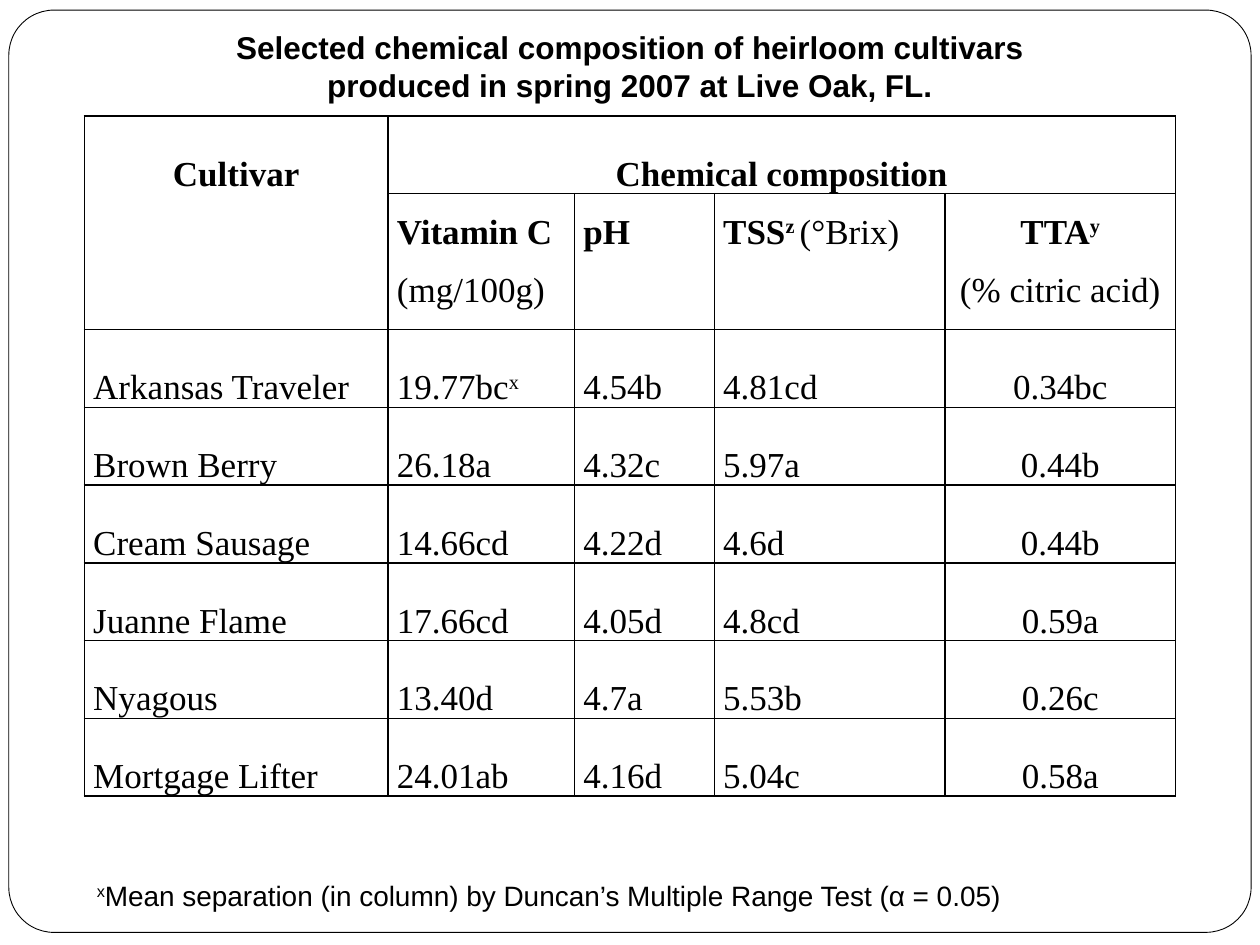
"""Build a slide tabulating the chemical composition of heirloom cultivars."""
from lxml import etree
from pptx import Presentation
from pptx.dml.color import RGBColor
from pptx.enum.shapes import MSO_SHAPE
from pptx.enum.text import MSO_ANCHOR, PP_ALIGN
from pptx.oxml.ns import qn
from pptx.util import Inches, Pt

BLACK = RGBColor(0, 0, 0)
WHITE = RGBColor(255, 255, 255)
ROUNDED = MSO_SHAPE.ROUNDED_RECTANGLE
LEFT, CENTER = PP_ALIGN.LEFT, PP_ALIGN.CENTER
TOP = MSO_ANCHOR.TOP
SANS, SERIF = "Arial", "Times New Roman"
PLAIN, BOLD, SUPER, BOLD_SUPER = (0, 0), (1, 0), (0, 1), (1, 1)

TITLE = [
    [("Selected chemical composition of heirloom cultivars", BOLD)],
    [("produced in spring 2007 at Live Oak, FL.", BOLD)],
]
MEASURES = [
    [[("Vitamin C", BOLD), (" (mg/100g)", PLAIN)]],
    [[("pH", BOLD)]],
    [[("TSS", BOLD), ("z ", BOLD_SUPER), ("(°Brix)", PLAIN)]],
    [[("TTA", BOLD), ("y", BOLD_SUPER)], [("(% citric acid)", PLAIN)]],
]
CULTIVARS = [
    ("Arkansas Traveler", "19.77bc", "4.54b", "4.81cd", "0.34bc"),
    ("Brown Berry", "26.18a", "4.32c", "5.97a", "0.44b"),
    ("Cream Sausage", "14.66cd", "4.22d", "4.6d", "0.44b"),
    ("Juanne Flame", "17.66cd", "4.05d", "4.8cd", "0.59a"),
    ("Nyagous", "13.40d", "4.7a", "5.53b", "0.26c"),
    ("Mortgage Lifter", "24.01ab", "4.16d", "5.04c", "0.58a"),
]
FOOTNOTE = [[
    ("x", SUPER),
    ("Mean separation (in column) by Duncan’s Multiple Range Test (α = 0.05)", PLAIN),
]]
COLUMN_WIDTHS = (2.41, 1.48, 1.11, 1.83, 1.83)
ROW_HEIGHT, MEASURE_HEIGHT = 0.5, 1.08


def write(frame, lines, font_name, size, align=LEFT, spacing=None):
    """Fill a text frame with lines made of (text, style) runs."""
    for index, line in enumerate(lines):
        paragraph = frame.add_paragraph() if index else frame.paragraphs[0]
        paragraph.alignment = align
        if spacing:
            paragraph.line_spacing = spacing
        for text, (bold, raised) in line:
            run = paragraph.add_run()
            run.text = text
            run.font.name = font_name
            run.font.size = Pt(size)
            run.font.bold = bool(bold)
            run.font.color.rgb = BLACK
            if raised:
                run.font._element.set("baseline", "30000")


def add_frame(slide):
    """Add the rounded page border behind everything else."""
    border = slide.shapes.add_shape(
        ROUNDED, Inches(0.07), Inches(0.08), Inches(9.86), Inches(7.32))
    border.adjustments[0] = 0.049
    border.shadow.inherit = False
    border.fill.solid()
    border.fill.fore_color.rgb = WHITE
    border.line.color.rgb = BLACK
    border.line.width = Pt(0.5)
    slide.shapes._spTree.insert(2, border._element)


def add_title(slide):
    """Place and fill the title placeholder."""
    title = slide.shapes.title
    title.left, title.top = Inches(0.25), Inches(0.17)
    title.width, title.height = Inches(9.5), Inches(0.71)
    title.text_frame.vertical_anchor = TOP
    write(title.text_frame, TITLE, SANS, 18, CENTER)


def add_footnote(slide):
    """Add the note on mean separation."""
    note = slide.shapes.add_textbox(
        Inches(0.67), Inches(6.92), Inches(8.67), Inches(0.37))
    note.text_frame.word_wrap = True
    write(note.text_frame, FOOTNOTE, SANS, 16)


def style_cell(cell):
    """Give a cell thin black borders, narrow margins and a white fill."""
    cell.margin_left = cell.margin_right = Inches(0.07)
    cell.margin_top = cell.margin_bottom = 0
    properties = cell._tc.get_or_add_tcPr()
    for side in ("a:lnL", "a:lnR", "a:lnT", "a:lnB"):
        edge = etree.SubElement(properties, qn(side), w=str(Pt(1)))
        fill = etree.SubElement(edge, qn("a:solidFill"))
        etree.SubElement(fill, qn("a:srgbClr"), val=str(BLACK))
    cell.fill.solid()
    cell.fill.fore_color.rgb = WHITE


def add_composition_table(slide):
    """Add the table of measures by cultivar."""
    heights = [ROW_HEIGHT, MEASURE_HEIGHT] + [ROW_HEIGHT] * len(CULTIVARS)
    last = len(COLUMN_WIDTHS) - 1
    table = slide.shapes.add_table(
        len(heights), len(COLUMN_WIDTHS), Inches(0.67), Inches(0.92),
        Inches(sum(COLUMN_WIDTHS)), Inches(sum(heights))).table
    table.first_row = table.horz_banding = False
    for column, width in zip(table.columns, COLUMN_WIDTHS):
        column.width = Inches(width)
    for row, height in zip(table.rows, heights):
        row.height = Inches(height)
    for cell in table.iter_cells():
        style_cell(cell)

    def put(row, column, lines, align, spacing):
        write(table.cell(row, column).text_frame, lines, SERIF, 20, align, spacing)

    table.cell(0, 0).merge(table.cell(1, 0))
    table.cell(0, 1).merge(table.cell(0, last))
    put(0, 0, [[("Cultivar", BOLD)]], CENTER, 2.0)
    put(0, 1, [[("Chemical composition", BOLD)]], CENTER, 2.0)
    for column, lines in enumerate(MEASURES, 1):
        put(1, column, lines, CENTER if column == last else LEFT, 1.5)
    for row, values in enumerate(CULTIVARS, 2):
        for column, value in enumerate(values):
            runs = [(value, PLAIN)]
            if (row, column) == (2, 1):
                runs.append(("x", SUPER))
            put(row, column, [runs], CENTER if column == last else LEFT, 2.0)


def main():
    """Assemble and save the slide."""
    presentation = Presentation()
    presentation.slide_width = Inches(10)
    presentation.slide_height = Inches(7.5)
    slide = presentation.slides.add_slide(presentation.slide_layouts[5])
    add_frame(slide)
    add_composition_table(slide)
    add_footnote(slide)
    add_title(slide)
    presentation.save("out.pptx")


if __name__ == "__main__":
    main()
